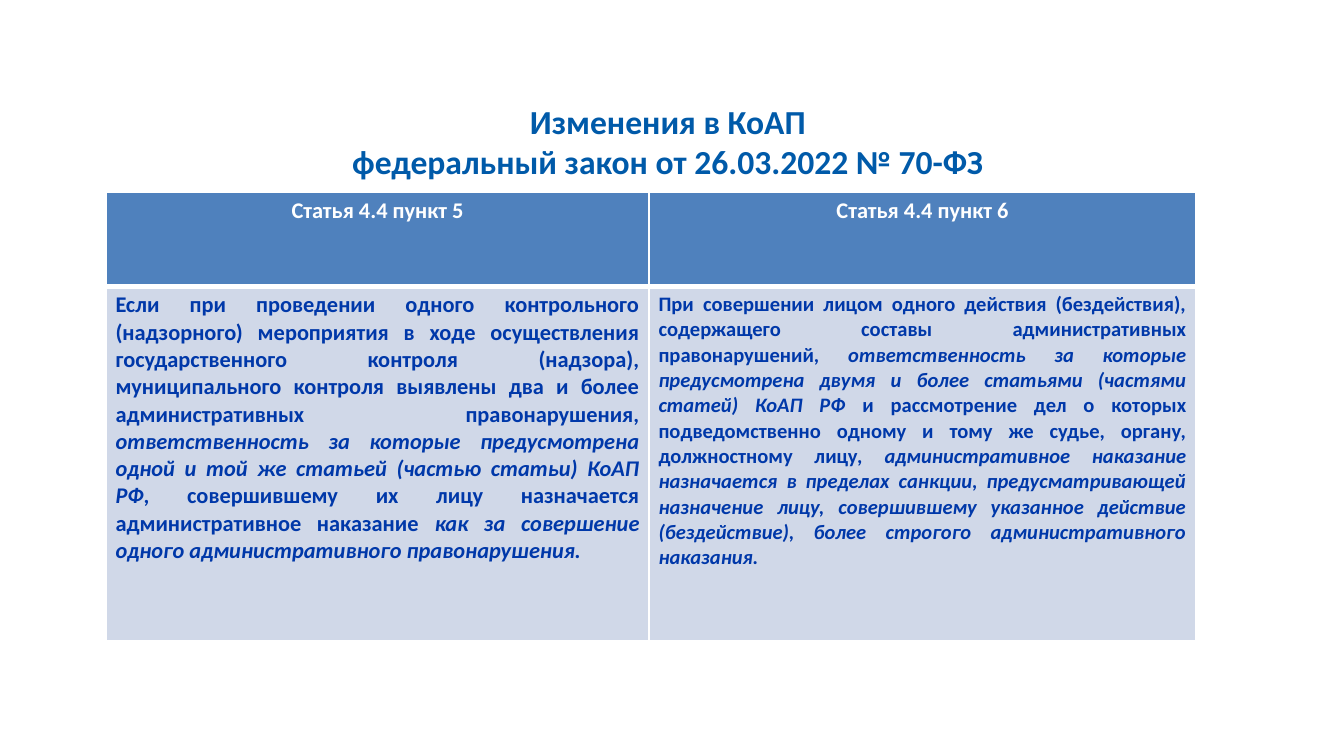
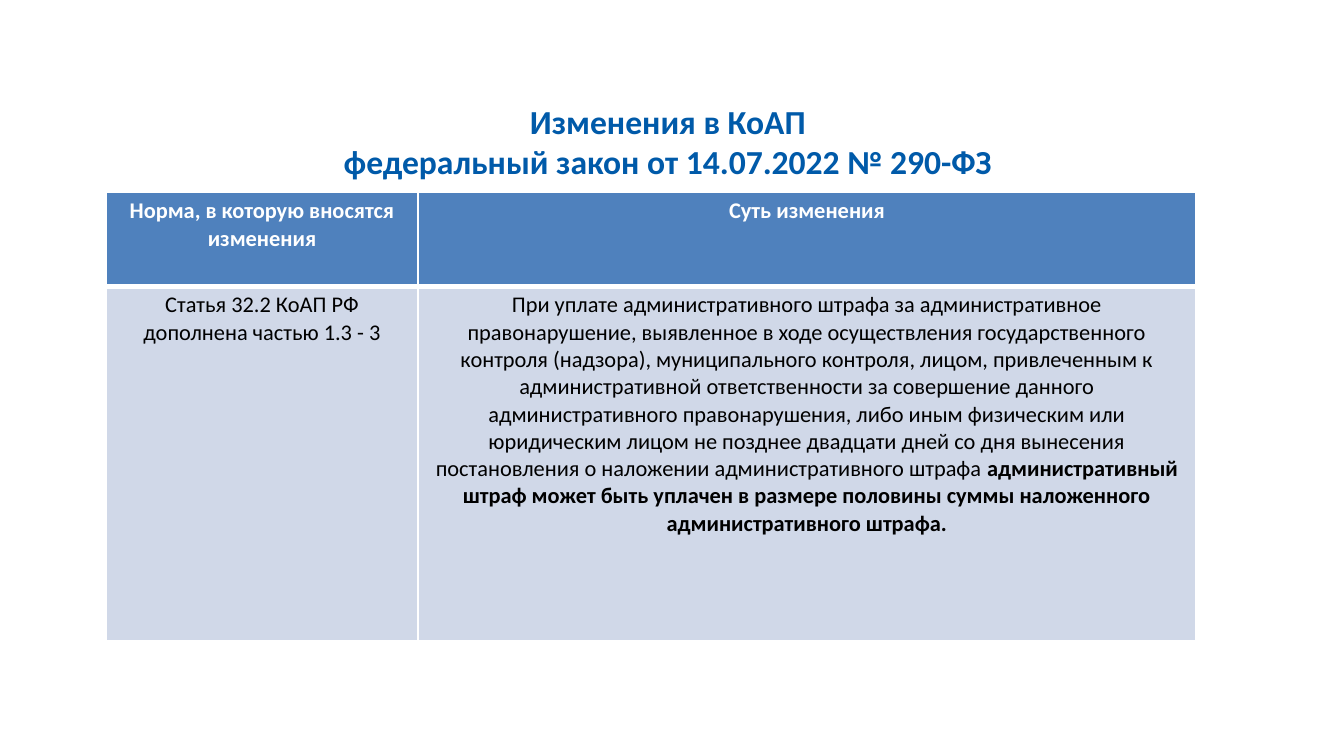
import pptx
import pptx.dml.color
import pptx.enum.text
import pptx.oxml
import pptx.oxml.ns
import pptx.util

Inches = pptx.util.Inches
Pt = pptx.util.Pt
ALIGN = pptx.enum.text.PP_ALIGN

FONT = "Calibri"
TITLE_BLUE, TEXT_BLUE = "005AA9", "0038A9"
HEADER_FILL, BODY_FILL = "4F81BD", "D0D8E8"
WHITE, BLACK = "FFFFFF", "000000"
ROW_HEIGHTS = (0.7, 2.64)
SLIDE_WIDTH = Inches(10)
SLIDE_HEIGHT = SLIDE_WIDTH * 9 // 16

# Content: each body cell is a size and a list of (text, emphasised) parts
SLIDES = [
    {
        "law": "федеральный закон от 26.03.2022 № 70-ФЗ",
        "widths": (4.04, 4.07),
        "headers": ("Статья 4.4 пункт 5", "Статья 4.4 пункт 6"),
        "color": TEXT_BLUE,
        "align": ALIGN.JUSTIFY,
        "bold": True,
        "emphasis": "italic",
        "body": [
            (12, [
                ("Если при проведении одного контрольного (надзорного) мероприятия в ходе "
                 "осуществления государственного контроля (надзора), муниципального контроля "
                 "выявлены два и более административных правонарушения, ", False),
                ("ответственность за которые предусмотрена одной и той же статьей "
                 "(частью статьи) КоАП РФ", True),
                (", совершившему их лицу назначается административное наказание ", False),
                ("как за совершение одного административного правонарушения.", True),
            ]),
            (11, [
                ("При совершении лицом одного действия (бездействия), содержащего составы "
                 "административных правонарушений, ", False),
                ("ответственность за которые предусмотрена двумя и более статьями "
                 "(частями статей) КоАП РФ", True),
                (" и рассмотрение дел о которых подведомственно одному и тому же судье, "
                 "органу, должностному лицу, ", False),
                ("административное наказание назначается в пределах санкции, "
                 "предусматривающей назначение лицу, совершившему указанное действие "
                 "(бездействие), более строгого административного наказания.", True),
            ]),
        ],
    },
    {
        "law": "федеральный закон от 14.07.2022 № 290-ФЗ",
        "widths": (2.32, 5.79),
        "headers": ("Норма, в которую вносятся изменения", "Суть изменения"),
        "color": BLACK,
        "align": ALIGN.CENTER,
        "bold": False,
        "emphasis": "bold",
        "body": [
            (12, [("Статья 32.2 КоАП РФ дополнена частью 1.3 - 3", False)]),
            (12, [
                ("При уплате административного штрафа за административное правонарушение, "
                 "выявленное в ходе осуществления государственного контроля (надзора), "
                 "муниципального контроля, лицом, привлеченным к административной "
                 "ответственности за совершение данного административного правонарушения, "
                 "либо иным физическим или юридическим лицом не позднее двадцати дней со дня "
                 "вынесения постановления о наложении административного штрафа ", False),
                ("административный штраф может быть уплачен в размере половины суммы "
                 "наложенного административного штрафа.", True),
            ]),
        ],
    },
]


def rgb(value):
    return pptx.dml.color.RGBColor.from_string(value)


def style_paragraph(paragraph, size, color, bold, align):
    paragraph.alignment = align
    font = paragraph.font
    font.name, font.size, font.bold = FONT, Pt(size), bold
    font.color.rgb = rgb(color)


def set_margins(target, side, vertical):
    target.margin_left = target.margin_right = Inches(side)
    target.margin_top = target.margin_bottom = Inches(vertical)


def add_title(slide, law):
    title = slide.shapes.title
    title.left, title.top = Inches(1.04), Inches(0.55)
    title.width, title.height = Inches(7.86), Inches(0.84)
    frame = title.text_frame
    frame.auto_size = pptx.enum.text.MSO_AUTO_SIZE.NONE
    frame.vertical_anchor = pptx.enum.text.MSO_ANCHOR.BOTTOM
    set_margins(frame, 0.08, 0.04)
    frame.text = f"Изменения в КоАП\v{law}"
    style_paragraph(frame.paragraphs[0], 18, TITLE_BLUE, True, ALIGN.CENTER)


def format_cell(cell, fill, thick_side):
    set_margins(cell, 0.07, 0.04)
    properties = cell._tc.get_or_add_tcPr()
    for side in ("L", "R", "T", "B"):
        width = Pt(3 if side == thick_side else 1)
        properties.append(pptx.oxml.parse_xml(
            f'<a:ln{side} {pptx.oxml.ns.nsdecls("a")} w="{width}"><a:solidFill>'
            f'<a:srgbClr val="{WHITE}"/></a:solidFill></a:ln{side}>'))
    cell.fill.solid()
    cell.fill.fore_color.rgb = rgb(fill)


def add_comparison_table(slide, content):
    widths = content["widths"]
    table = slide.shapes.add_table(
        len(ROW_HEIGHTS), len(widths), Inches(0.79), Inches(1.43),
        Inches(sum(widths)), Inches(sum(ROW_HEIGHTS))).table
    for row, height in zip(table.rows, ROW_HEIGHTS):
        row.height = Inches(height)

    for index, width in enumerate(widths):
        table.columns[index].width = Inches(width)

        # Header cell
        header = table.cell(0, index)
        format_cell(header, HEADER_FILL, "B")
        header.text = content["headers"][index]
        style_paragraph(header.text_frame.paragraphs[0], 12, WHITE, True, ALIGN.CENTER)

        # Body cell
        body = table.cell(1, index)
        format_cell(body, BODY_FILL, "T")
        size, parts = content["body"][index]
        paragraph = body.text_frame.paragraphs[0]
        style_paragraph(paragraph, size, content["color"], content["bold"], content["align"])
        for text, emphasised in parts:
            run = paragraph.add_run()
            run.text = text
            if emphasised:
                setattr(run.font, content["emphasis"], True)


def main():
    presentation = pptx.Presentation()
    presentation.slide_width, presentation.slide_height = SLIDE_WIDTH, SLIDE_HEIGHT
    title_only = presentation.slide_layouts[5]
    for content in SLIDES:
        slide = presentation.slides.add_slide(title_only)
        add_title(slide, content["law"])
        add_comparison_table(slide, content)
    presentation.save("out.pptx")


if __name__ == "__main__":
    main()
